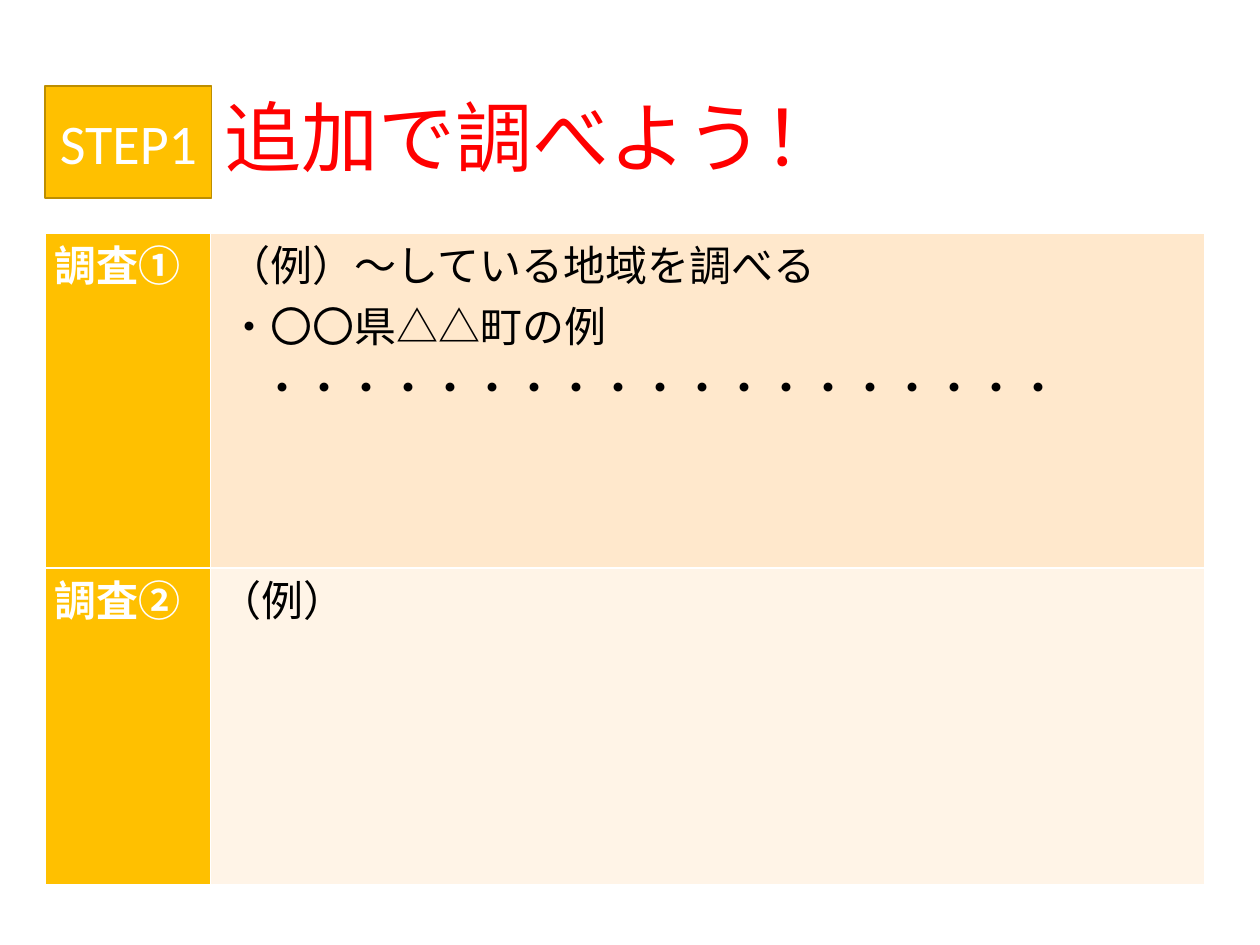
from lxml import etree
from pptx import Presentation
from pptx.dml.color import RGBColor
from pptx.enum.shapes import MSO_SHAPE
from pptx.enum.text import MSO_ANCHOR, PP_ALIGN
from pptx.oxml.ns import qn
from pptx.util import Inches, Pt

RECT = MSO_SHAPE.RECTANGLE
MID, TOP = MSO_ANCHOR.MIDDLE, MSO_ANCHOR.TOP
LEFT, CENTER, JUST = PP_ALIGN.LEFT, PP_ALIGN.CENTER, PP_ALIGN.JUSTIFY

TITLE = "追加で調べよう！"
STEP = "STEP1"
ROWS = [
    ("調査①", [" （例）～している地域を調べる",
             " ・〇〇県△△町の例",
             "　" + "・" * 19]),
    ("調査②", ["（例）"]),
]
FONT = "Calibri"
HEX = {"gold": "FFC000", "edge": "BD8E00", "red": "FF0000",
       "white": "FFFFFF", "black": "000000"}
BANDS = ["FFE8CC", "FFF4E7"]

EDGE = 0.36
COLS = [1.31, 7.89]
HIGHS = [2.66, 2.51]
BADGE = (EDGE, 0.68, 1.32, 0.89)
HEAD = (EDGE + 1.32, 0.4, 7.63, 1.45)
GRID = (EDGE, 1.85, sum(COLS), sum(HIGHS))


def rgb(name):
    return RGBColor.from_string(HEX.get(name, name))


def paint(item, color):
    item.fill.solid()
    item.fill.fore_color.rgb = rgb(color)


def write(frame, lines, size, color, align, bold=False, spacing=None):
    frame.text = "\n".join(lines)
    for para in frame.paragraphs:
        para.alignment = align
        para.line_spacing = spacing
        font = para.runs[0].font
        for key, value in {"name": FONT, "size": Pt(size), "bold": bold}.items():
            setattr(font, key, value)
        font.color.rgb = rgb(color)


def border(cell, color, width):
    props = cell._tc.get_or_add_tcPr()
    for spot, side in enumerate(("lnL", "lnR", "lnT", "lnB")):
        line = etree.Element(qn("a:" + side), w=str(Pt(width)))
        fill = etree.SubElement(line, qn("a:solidFill"))
        etree.SubElement(fill, qn("a:srgbClr"), val=HEX[color])
        props.insert(spot, line)


def place(shape, box):
    for key, value in zip(("left", "top", "width", "height"), box):
        setattr(shape, key, Inches(value))


deck = Presentation()
deck.slide_width, deck.slide_height = Inches(10), Inches(7.5)
slide = deck.slides.add_slide(deck.slide_layouts[5])

title = slide.shapes.title
place(title, HEAD)
title.text_frame.vertical_anchor = MID
write(title.text_frame, [TITLE], 44, "red", LEFT, spacing=0.9)

badge = slide.shapes.add_shape(RECT, *map(Inches, BADGE))
badge.shadow.inherit = False
paint(badge, "gold")
badge.line.color.rgb = rgb("edge")
badge.line.width = Pt(1)
badge.text_frame.vertical_anchor = MID
write(badge.text_frame, [STEP], 32, "white", CENTER)

table = slide.shapes.add_table(len(ROWS), len(COLS), *map(Inches, GRID)).table
for col, width in zip(table.columns, COLS):
    col.width = Inches(width)
for row, high, (label, lines), band in zip(table.rows, HIGHS, ROWS, BANDS):
    row.height = Inches(high)
    looks = [([label], "white", "gold", True), (lines, "black", band, False)]
    for cell, (text, ink, back, bold) in zip(row.cells, looks):
        cell.margin_left = cell.margin_right = Inches(0.07)
        cell.margin_top = cell.margin_bottom = 0
        cell.vertical_anchor = TOP
        paint(cell, back)
        border(cell, "white", 1)
        write(cell.text_frame, text, 24, ink, JUST, bold)

deck.save("out.pptx")
